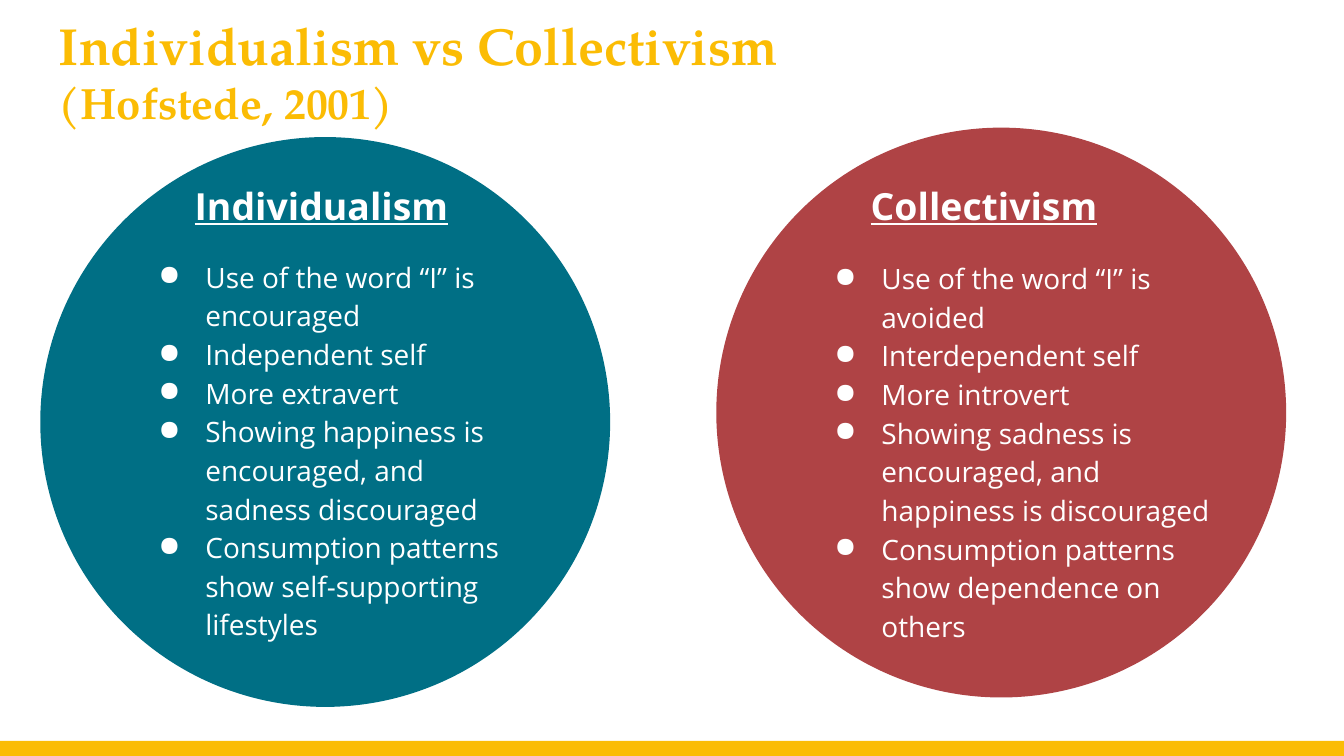
from lxml.etree import SubElement
from pptx import Presentation
from pptx.dml.color import RGBColor
from pptx.enum.shapes import MSO_SHAPE
from pptx.enum.text import MSO_ANCHOR
from pptx.oxml.ns import qn
from pptx.util import Inches, Pt

GOLD = RGBColor(0xFB, 0xBC, 0x04)
TEAL = RGBColor(0x00, 0x6F, 0x85)
RED = RGBColor(0xAF, 0x43, 0x45)
WHITE = RGBColor(0xFF, 0xFF, 0xFF)

SLIDE_WIDTH = 10
SLIDE_HEIGHT = SLIDE_WIDTH * 9 / 16
DIAMETER = 0.424 * SLIDE_WIDTH
HEADING_TOP, HEADING_HEIGHT = 1.26, 0.54
LIST_HEIGHT = 3.07

CULTURES = [
    {
        "heading": "Individualism",
        "color": TEAL,
        "circle": (0.3, 1.02),
        "heading_span": (1.35, 2.47),
        "list_box": (0.93, 1.8, 2.98),
        "traits": [
            "Use of the word “I” is encouraged",
            "Independent self",
            "More extravert",
            "Showing happiness is encouraged, and sadness discouraged",
            "Consumption patterns show self-supporting lifestyles",
        ],
    },
    {
        "heading": "Collectivism",
        "color": RED,
        "circle": (5.33, 0.95),
        "heading_span": (6.38, 2.15),
        "list_box": (5.96, 1.81, 3.28),
        "traits": [
            "Use of the word “I” is avoided",
            "Interdependent self",
            "More introvert",
            "Showing sadness is encouraged, and happiness is discouraged",
            "Consumption patterns show dependence on others",
        ],
    },
]


def add_filled(slide, preset, left, top, width, height, color):
    """Add a borderless shape in one flat colour."""
    filled = slide.shapes.add_shape(
        preset, Inches(left), Inches(top), Inches(width), Inches(height))
    filled.shadow.inherit = False
    filled.fill.solid()
    filled.fill.fore_color.rgb = color
    filled.line.fill.background()


def add_text_frame(slide, left, top, width, height):
    """Add a wrapping text box and return its frame with even insets."""
    frame = slide.shapes.add_textbox(
        Inches(left), Inches(top), Inches(width), Inches(height)).text_frame
    frame.word_wrap = True
    frame.vertical_anchor = MSO_ANCHOR.TOP
    frame.margin_left = frame.margin_right = Inches(0.1)
    frame.margin_top = frame.margin_bottom = Inches(0.1)
    return frame


def next_paragraph(frame, index):
    """Return the first paragraph for index 0, otherwise a new one."""
    return frame.add_paragraph() if index else frame.paragraphs[0]


def add_run(paragraph, text, size, color, face="Open Sans", bold=False, underline=False):
    """Append one styled run to a paragraph."""
    run = paragraph.add_run()
    run.text = text
    run.font.name = face
    run.font.size = Pt(size)
    run.font.color.rgb = color
    run.font.bold = bold
    run.font.underline = underline


def set_bullet(paragraph):
    """Give a paragraph a white round bullet with a hanging indent."""
    properties = paragraph._p.get_or_add_pPr()
    properties.set("marL", str(Inches(0.5)))
    properties.set("indent", str(Inches(-0.35)))
    bullet_color = SubElement(properties, qn("a:buClr"))
    SubElement(bullet_color, qn("a:srgbClr"), val=str(WHITE))
    SubElement(properties, qn("a:buChar"), char="●")


def add_title(slide):
    """Add the two-line title with its citation."""
    frame = add_text_frame(slide, 0.34, 0, 9.32, 0.71)
    lines = [("Individualism vs Collectivism", 27.9), ("(Hofstede, 2001)", 23.4)]
    for index, (text, size) in enumerate(lines):
        add_run(next_paragraph(frame, index), text, size, GOLD, "TeX Gyre Pagella", bold=True)


def add_culture(slide, culture):
    """Add one circle with its heading and list of traits."""
    add_filled(slide, MSO_SHAPE.OVAL, *culture["circle"], DIAMETER, DIAMETER, culture["color"])
    left, width = culture["heading_span"]
    heading = add_text_frame(slide, left, HEADING_TOP, width, HEADING_HEIGHT)
    add_run(heading.paragraphs[0], culture["heading"], 20, WHITE, bold=True, underline=True)
    traits = add_text_frame(slide, *culture["list_box"], LIST_HEIGHT)
    for index, trait in enumerate(culture["traits"]):
        paragraph = next_paragraph(traits, index)
        set_bullet(paragraph)
        paragraph.line_spacing = 1.15
        add_run(paragraph, trait, 15, WHITE)


def main():
    """Build and save the comparison slide."""
    presentation = Presentation()
    presentation.slide_width = Inches(SLIDE_WIDTH)
    presentation.slide_height = Inches(SLIDE_HEIGHT)
    slide = presentation.slides.add_slide(presentation.slide_layouts[6])
    footer_height = 0.02 * SLIDE_HEIGHT
    add_filled(slide, MSO_SHAPE.RECTANGLE, 0, SLIDE_HEIGHT - footer_height,
               SLIDE_WIDTH, footer_height, GOLD)
    add_title(slide)
    for culture in CULTURES:
        add_culture(slide, culture)
    presentation.save("out.pptx")


if __name__ == "__main__":
    main()
